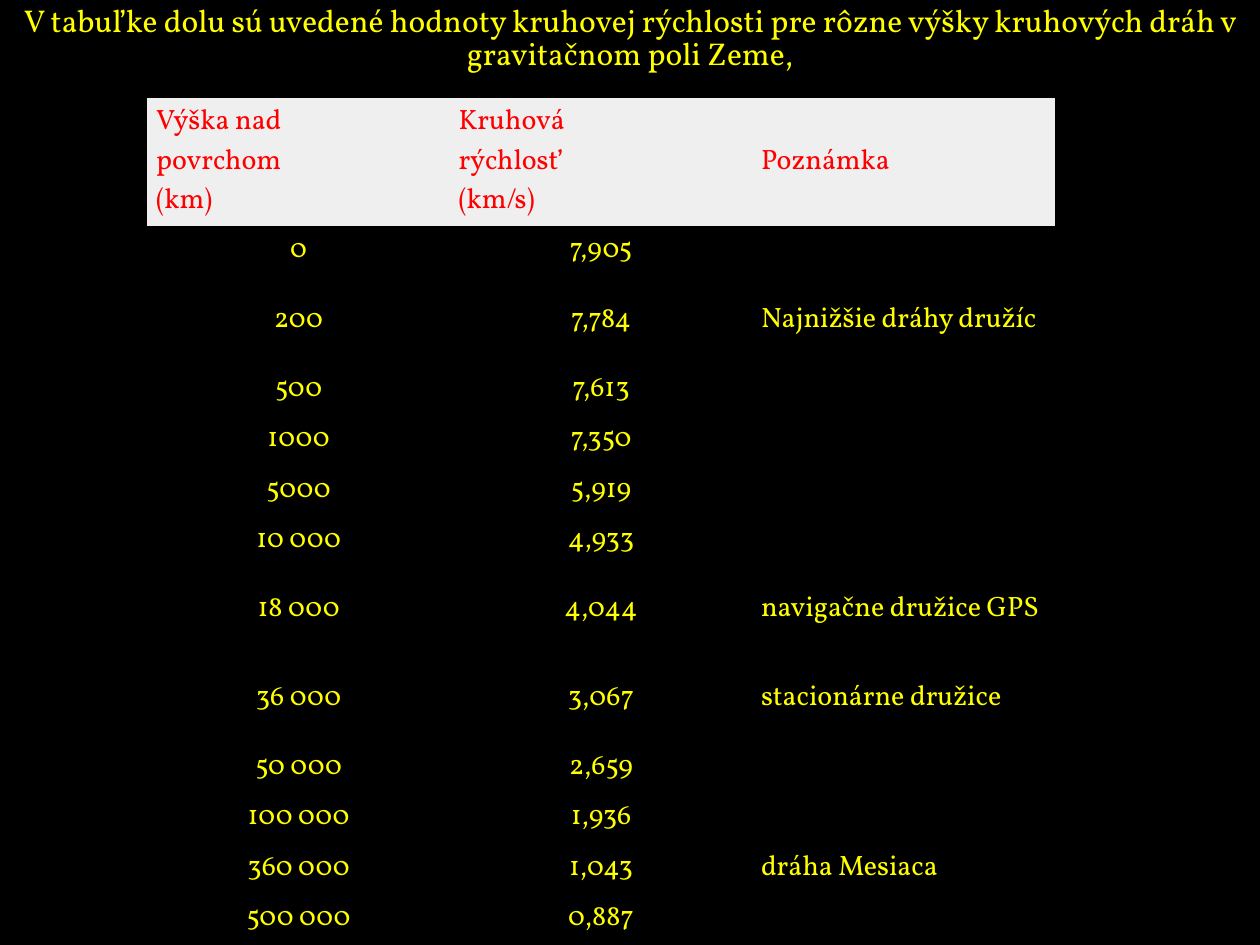
from pptx import Presentation
from pptx.dml.color import RGBColor
from pptx.enum.text import MSO_ANCHOR, PP_ALIGN
from pptx.util import Inches, Pt

FONT = "Vollkorn"
BLACK = RGBColor(0x00, 0x00, 0x00)
YELLOW = RGBColor(0xFF, 0xFF, 0x00)
RED = RGBColor(0xFF, 0x00, 0x00)
PALE_GREY = RGBColor(0xEF, 0xEF, 0xEF)

TITLE = ("V tabuľke dolu sú uvedené hodnoty kruhovej rýchlosti pre rôzne "
         "výšky kruhových dráh v gravitačnom poli Zeme,")
HEADER = ("Výška nad\npovrchom\n(km)", "Kruhová\nrýchlosť\n(km/s)", "Poznámka")
ORBITS = [
    ("0", "7,905", ""),
    ("200", "7,784", "Najnižšie dráhy družíc"),
    ("500", "7,613", ""),
    ("1000", "7,350", ""),
    ("5000", "5,919", ""),
    ("10 000", "4,933", ""),
    ("18 000", "4,044", "navigačne družice GPS"),
    ("36 000", "3,067", "stacionárne družice"),
    ("50 000", "2,659", ""),
    ("100 000", "1,936", ""),
    ("360 000", "1,043", "dráha Mesiaca"),
    ("500 000", "0,887", ""),
]
TALL_ROWS = ("200", "18 000", "36 000")
HEADER_HEIGHT, TALL_HEIGHT, ROW_HEIGHT = 1.01, 0.7, 0.4
COLUMN_WIDTH = 2.4


def add_text(paragraph, text, size, color):
    """Add the text run by run, with a line break at each newline."""
    for number, line in enumerate(text.split("\n")):
        if number:
            paragraph.add_line_break()
        span = paragraph.add_run()
        span.text = line
        span.font.name = FONT
        span.font.size = Pt(size)
        span.font.color.rgb = color


def add_title(page):
    box = page.shapes.title
    box.left, box.top, box.width, box.height = 0, 0, Inches(10), Inches(0.71)
    frame = box.text_frame
    frame.word_wrap = True
    frame.vertical_anchor = MSO_ANCHOR.TOP
    paragraph = frame.paragraphs[0]
    paragraph.alignment = PP_ALIGN.CENTER
    paragraph.line_spacing = 0.87
    add_text(paragraph, TITLE, 18, YELLOW)


def add_orbit_table(page):
    heights = [HEADER_HEIGHT] + [
        TALL_HEIGHT if orbit[0] in TALL_ROWS else ROW_HEIGHT for orbit in ORBITS]
    table = page.shapes.add_table(
        len(heights), len(HEADER), Inches(1.17), Inches(0.78),
        Inches(COLUMN_WIDTH * len(HEADER)), Inches(sum(heights))).table
    table.first_row = table.horz_banding = False
    for column in table.columns:
        column.width = Inches(COLUMN_WIDTH)
    for row, height, texts in zip(table.rows, heights, [HEADER] + ORBITS):
        row.height = Inches(height)
        is_header = texts is HEADER
        for index, (cell, text) in enumerate(zip(row.cells, texts)):
            cell.margin_left = cell.margin_right = Inches(0.07)
            cell.margin_top = cell.margin_bottom = Inches(0.03)
            cell.vertical_anchor = MSO_ANCHOR.MIDDLE
            if is_header:
                cell.fill.solid()
                cell.fill.fore_color.rgb = PALE_GREY
            else:
                cell.fill.background()
            paragraph = cell.text_frame.paragraphs[0]
            paragraph.font.size = Pt(16)
            if not is_header and index < 2:
                paragraph.alignment = PP_ALIGN.CENTER
            if text:
                add_text(paragraph, text, 16, RED if is_header else YELLOW)
    # A clear style: no grid lines, no bands
    style = table._tbl.tblPr.find(
        "{http://schemas.openxmlformats.org/drawingml/2006/main}tableStyleId")
    style.text = "{2D5ABB26-0587-4C30-8999-92F81FD0307C}"


def main():
    deck = Presentation()
    deck.slide_width, deck.slide_height = Inches(10), Inches(7.5)
    page = deck.slides.add_slide(deck.slide_layouts[5])
    page.background.fill.solid()
    page.background.fill.fore_color.rgb = BLACK
    add_orbit_table(page)
    add_title(page)
    deck.save("out.pptx")


if __name__ == "__main__":
    main()
